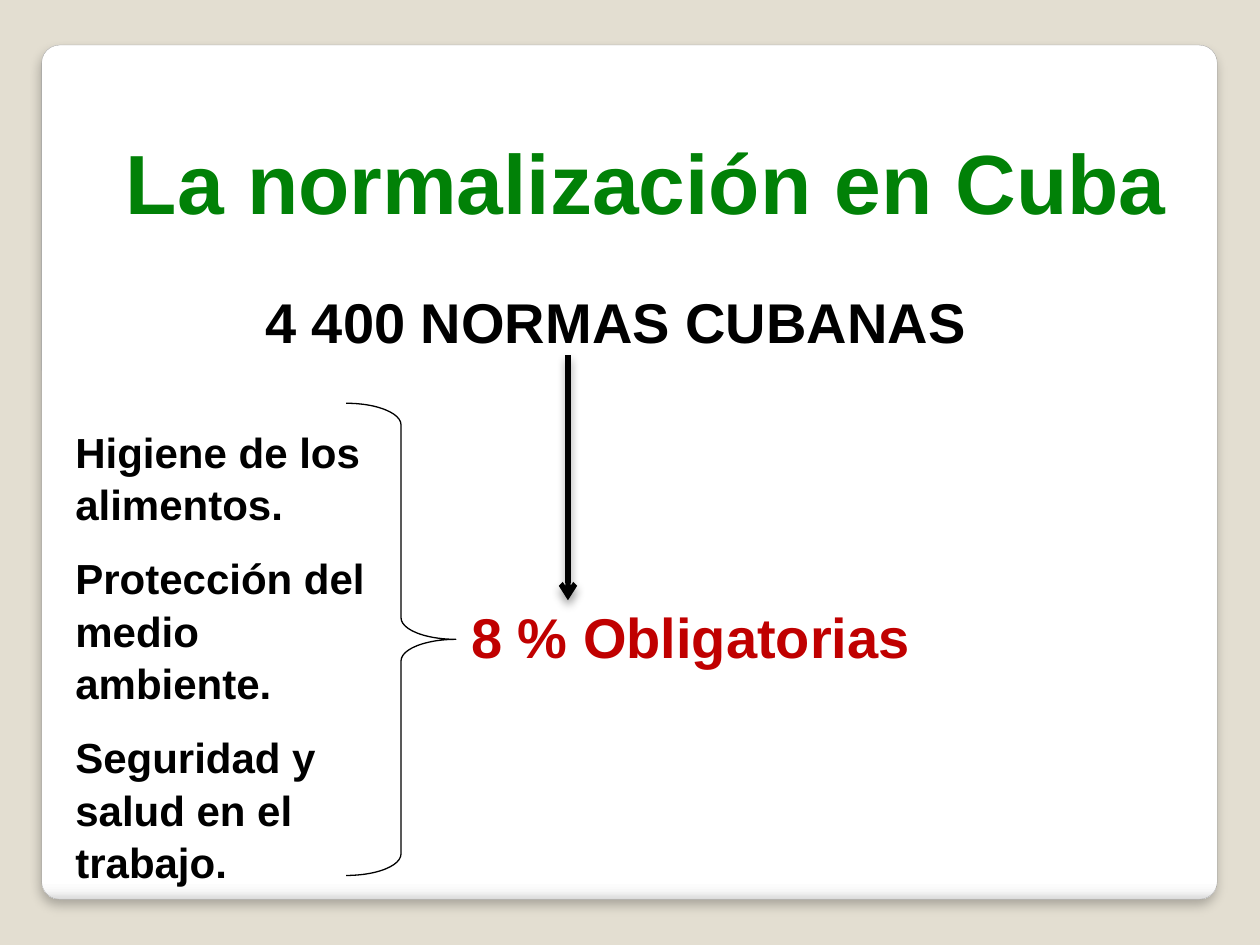
"""Build the slide about standardization in Cuba."""
import lxml.etree
import pptx
import pptx.dml.color
import pptx.enum.shapes
import pptx.enum.text
import pptx.oxml
import pptx.oxml.ns
import pptx.util

Cm = pptx.util.Cm
Pt = pptx.util.Pt
MSO_SHAPE = pptx.enum.shapes.MSO_SHAPE
NAMESPACE = pptx.oxml.ns.nsdecls("a")


def color(hex_value):
    return pptx.dml.color.RGBColor.from_string(hex_value)


def shadow_xml(opacity, blur, distance):
    return (
        f'<a:effectLst {NAMESPACE}><a:outerShdw blurRad="{Pt(blur)}" dist="{Pt(distance)}" '
        f'dir="5400000" algn="tl" rotWithShape="0"><a:srgbClr val="000000">'
        f'<a:alpha val="{opacity * 1000}"/></a:srgbClr></a:outerShdw></a:effectLst>'
    )


class Page:
    def __init__(self, deck, font="Arial", ink="000000", background="E3DED1"):
        self.slide = deck.slides.add_slide(deck.slide_layouts[6])
        self.font = font
        self.ink = ink
        fill = self.slide.background.fill
        fill.solid()
        fill.fore_color.rgb = color(background)

    def text(self, place, paragraphs, size, ink=None, top=0.25, wrap=True, **spacing):
        box = self.slide.shapes.add_textbox(*map(Cm, place))
        frame = box.text_frame
        settings = {
            "word_wrap": wrap,
            "margin_left": Cm(0.25),
            "margin_right": Cm(0.25),
            "margin_top": Cm(top),
            "vertical_anchor": pptx.enum.text.MSO_ANCHOR.TOP,
        }
        for name, value in settings.items():
            setattr(frame, name, value)
        for index, words in enumerate(paragraphs):
            paragraph = frame.add_paragraph() if index else frame.paragraphs[0]
            for name, value in spacing.items():
                if index or name != "space_before":
                    setattr(paragraph, name, value)
            span = paragraph.add_run()
            span.text = words
            for name, value in {"name": self.font, "size": Pt(size), "bold": True}.items():
                setattr(span.font, name, value)
            span.font.color.rgb = color(ink or self.ink)
        return box

    def shape(self, kind, place, adjustments, line, width):
        shape = self.slide.shapes.add_shape(kind, *map(Cm, place))
        for index, value in enumerate(adjustments):
            shape.adjustments[index] = value
        shape.shadow.inherit = False
        shape.fill.background()
        shape.line.color.rgb = color(line)
        shape.line.width = Pt(width)
        return shape

    def card(self, place, stops):
        card = self.shape(MSO_SHAPE.ROUNDED_RECTANGLE, place, [0.021], "A4A4A4", 0.16)
        card.fill.gradient()
        card.fill.gradient_angle = 270
        stop_list = card.fill._fill._gradFill.find(pptx.oxml.ns.qn("a:gsLst"))
        for stop in list(stop_list):
            stop_list.remove(stop)
        for position, hex_value in stops:
            stop_list.append(pptx.oxml.parse_xml(
                f'<a:gs {NAMESPACE} pos="{position * 1000}"><a:srgbClr val="{hex_value}"/></a:gs>'
            ))
        properties = card._element.spPr
        properties.replace(
            properties.find(pptx.oxml.ns.qn("a:effectLst")),
            pptx.oxml.parse_xml(shadow_xml(25, 6, 4)),
        )
        return card

    def brace(self, place):
        return self.shape(MSO_SHAPE.RIGHT_BRACE, place, [0.197, 0.5], self.ink, 0.75)

    def arrow(self, start, end):
        arrow = self.slide.shapes.add_connector(
            pptx.enum.shapes.MSO_CONNECTOR.STRAIGHT, *map(Cm, start + end)
        )
        arrow.line.color.rgb = color(self.ink)
        arrow.line.width = Pt(3)
        lxml.etree.SubElement(
            arrow.line._get_or_add_ln(), pptx.oxml.ns.qn("a:tailEnd"), type="arrow"
        )
        arrow._element.spPr.append(pptx.oxml.parse_xml(shadow_xml(40, 5.2, 3)))
        return arrow


def main():
    deck = pptx.Presentation()
    deck.slide_width, deck.slide_height = Cm(25.4), Cm(19.05)
    page = Page(deck)
    page.card(
        (0.84, 0.91, 23.7, 17.22),
        [(0, "FFFFFF"), (98, "FFFFFF"), (99, "F7F7F7"), (100, "DADADA")],
    )
    page.text(
        (1.27, 8.38, 6.81, 9.5),
        [
            "Higiene de los alimentos.",
            "Protección del medio ambiente.",
            "Seguridad y salud en el trabajo.",
        ],
        24, top=0.17, line_spacing=1.04, space_before=Pt(12.5),
    )
    page.brace((6.98, 8.13, 2.21, 9.52))
    page.text((5.1, 5.54, 15.9, 1.62), ["4 400 NORMAS CUBANAS"], 32)
    page.text(
        (9.25, 12.27, 9.42, 1.24), ["8 % Obligatorias"], 32, "C00000",
        wrap=False, line_spacing=0.7,
    )
    page.arrow((11.45, 7.16), (11.45, 12.1))
    page.text((2.29, 2.34, 21.95, 1.19), ["La normalización en Cuba"], 48, "018107", top=0.3)
    deck.save("out.pptx")


if __name__ == "__main__":
    main()
